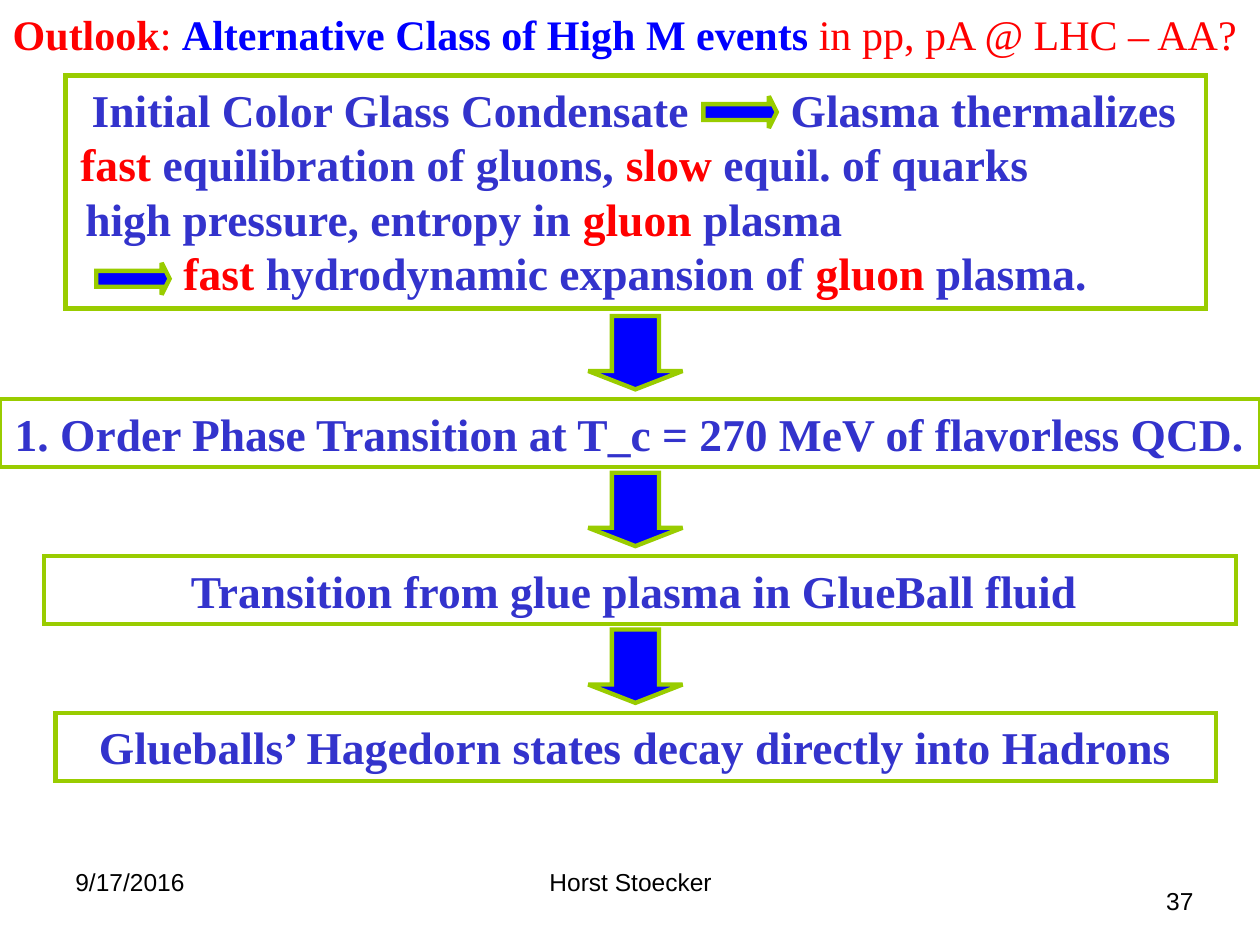
from dataclasses import dataclass

from lxml.etree import SubElement
from pptx import Presentation
from pptx.dml.color import RGBColor as Rgb
from pptx.enum.shapes import MSO_SHAPE as Shape
from pptx.enum.text import MSO_ANCHOR as Anchor, PP_ALIGN as Align
from pptx.oxml.ns import qn
from pptx.util import Cm, Pt


@dataclass(frozen=True)
class Theme:
    red: Rgb = Rgb(0xFF, 0x00, 0x00)
    blue: Rgb = Rgb(0x00, 0x00, 0xFF)
    indigo: Rgb = Rgb(0x33, 0x33, 0xCC)
    green: Rgb = Rgb(0x99, 0xCC, 0x00)
    white: Rgb = Rgb(0xFF, 0xFF, 0xFF)
    black: Rgb = Rgb(0x00, 0x00, 0x00)
    serif: str = "Times New Roman"
    sans: str = "Arial"
    title: Pt = Pt(24)
    body: Pt = Pt(26)
    footer: Pt = Pt(14)
    leading: Pt = Pt(31.2)
    outline: Pt = Pt(2.5)


THEME = Theme()

TITLE = [
    ("Outlook", THEME.red, True),
    (": ", THEME.red, False),
    ("Alternative Class of High M events ", THEME.blue, True),
    ("in pp, pA @ LHC – AA? ", THEME.red, False),
]
GLASMA_LINES = [
    (0.28, [("Initial Color Glass Condensate", THEME.indigo)]),
    (0.05, [("fast", THEME.red), (" equilibration of gluons, ", THEME.indigo),
            ("slow ", THEME.red), ("equil. of quarks", THEME.indigo)]),
    (0.15, [("high pressure, entropy in ", THEME.indigo), ("gluon", THEME.red),
            (" plasma", THEME.indigo)]),
    (2.13, [("fast", THEME.red), (" hydrodynamic expansion of ", THEME.indigo),
            ("gluon", THEME.red), (" plasma.", THEME.indigo)]),
]
GLASMA_FRAME = (1.32, 1.52, 22.99, 4.7)
THERMAL_LINES = [(0, [("Glasma thermalizes", THEME.indigo)])]
THERMAL_FRAME = (15.69, 1.52, 8.5, 1.35)
STAGES = [
    ("1. Order Phase Transition at T_c = 270 MeV of flavorless QCD.", 0, 25.4),
    ("Transition from glue plasma in GlueBall fluid ", 0.89, 24.03),
    ("Glueballs’ Hagedorn states decay directly into Hadrons", 1.12, 23.39),
]
STAGE_TOP, STAGE_PITCH, STAGE_HEIGHT = 8.05, 3.16, 1.37
DOWN_ARROW_LEFT, DOWN_ARROW_RISE = 11.86, 1.68
DOWN_ARROW_SIZE = (1.9, 1.48)
SIDE_ARROWS = [(14.6, 1.52), (2.36, 4.88)]
SIDE_ARROW_SIZE = (0.64, 1.48)
FOOTERS = [
    ("9/17/2016", Align.LEFT, (1.27, 17.35, 5.92, 1.32)),
    ("Horst Stoecker", Align.CENTER, (8.69, 17.35, 8.05, 1.32)),
    ("37", Align.RIGHT, (18.39, 17.73, 5.92, 1.32)),
]


def add_span(para, text, color, size, font, bold):
    span = para.add_run()
    span.text = text
    span.font.size, span.font.name, span.font.bold = size, font, bold
    span.font.color.rgb = color


def add_outlined(page, kind, frame, fill=None):
    shape = page.shapes.add_shape(kind, *map(Cm, frame))
    shape.shadow.inherit = False
    if fill is None:
        shape.fill.background()
    else:
        shape.fill.solid()
        shape.fill.fore_color.rgb = fill
    shape.line.color.rgb = THEME.green
    shape.line.width = THEME.outline
    outline = shape._element.spPr.find(qn("a:ln"))
    SubElement(outline, qn("a:miter"), lim="800000")
    return shape


def add_arrow(page, left, top, size, rotation=0):
    arrow = add_outlined(page, Shape.DOWN_ARROW, (left, top, *size), THEME.blue)
    arrow.adjustments[0], arrow.adjustments[1] = 0.5, 0.25
    arrow.rotation = rotation


def add_title(page):
    box = page.shapes.add_textbox(*map(Cm, (0, 0.05, 25.4, 1.3)))
    box.text_frame.word_wrap = False
    para = box.text_frame.paragraphs[0]
    para.alignment = Align.CENTER
    for text, color, bold in TITLE:
        add_span(para, text, color, THEME.title, THEME.serif, bold)


def fill_lines(box, lines):
    frame = box.text_frame
    frame.word_wrap = True
    frame.vertical_anchor = Anchor.TOP
    for index, (indent, spans) in enumerate(lines):
        para = frame.add_paragraph() if index else frame.paragraphs[0]
        para.alignment = Align.LEFT
        para.line_spacing = THEME.leading
        properties = para._p.get_or_add_pPr()
        properties.set("marL", str(Cm(indent)))
        properties.set("indent", "0")
        for text, color in spans:
            add_span(para, text, color, THEME.body, THEME.serif, True)


def add_stage(page, index, text, left, width):
    top = STAGE_TOP + index * STAGE_PITCH
    box = add_outlined(page, Shape.RECTANGLE, (left, top, width, STAGE_HEIGHT), THEME.white)
    box.text_frame.word_wrap = False
    box.text_frame.vertical_anchor = Anchor.MIDDLE
    para = box.text_frame.paragraphs[0]
    para.alignment = Align.CENTER
    add_span(para, text, THEME.indigo, THEME.body, THEME.serif, True)
    add_arrow(page, DOWN_ARROW_LEFT, top - DOWN_ARROW_RISE, DOWN_ARROW_SIZE)


def add_footer(page, text, alignment, frame):
    box = page.shapes.add_textbox(*map(Cm, frame))
    box.text_frame.word_wrap = True
    para = box.text_frame.paragraphs[0]
    para.alignment = alignment
    add_span(para, text, THEME.black, THEME.footer, THEME.sans, False)


def main():
    deck = Presentation()
    deck.slide_width, deck.slide_height = Cm(25.4), Cm(19.05)
    page = deck.slides.add_slide(deck.slide_layouts[6])
    add_title(page)
    fill_lines(add_outlined(page, Shape.RECTANGLE, GLASMA_FRAME), GLASMA_LINES)
    fill_lines(page.shapes.add_textbox(*map(Cm, THERMAL_FRAME)), THERMAL_LINES)
    for left, top in SIDE_ARROWS:
        add_arrow(page, left, top, SIDE_ARROW_SIZE, 270)
    for index, stage in enumerate(STAGES):
        add_stage(page, index, *stage)
    for footer in FOOTERS:
        add_footer(page, *footer)
    deck.save("out.pptx")


if __name__ == "__main__":
    main()
